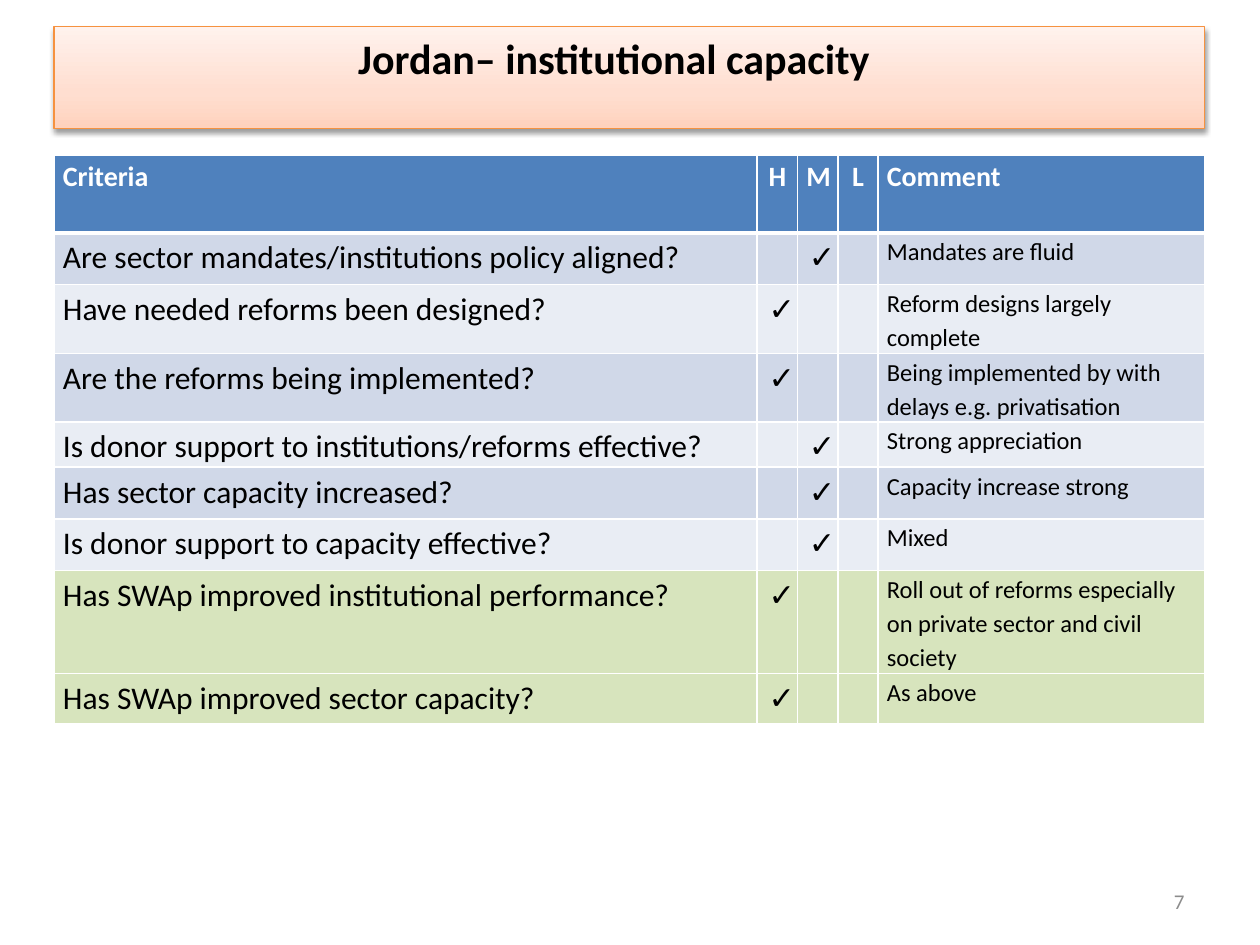
from pptx import Presentation
from pptx.dml.color import RGBColor as RGB
from pptx.enum.shapes import MSO_SHAPE as Shape
from pptx.enum.text import MSO_ANCHOR as Anchor, PP_ALIGN as Align
from pptx.oxml import parse_xml
from pptx.util import Inches, Pt

BLACK = RGB(0x00, 0x00, 0x00)
WHITE = RGB(0xFF, 0xFF, 0xFF)
GREY = RGB(0x8C, 0x8C, 0x8C)
BLUE = RGB(0x4F, 0x81, 0xBD)
DARK = RGB(0xD0, 0xD8, 0xE8)
PALE = RGB(0xE9, 0xED, 0xF4)
GREEN = RGB(0xD7, 0xE4, 0xBD)
EDGE = RGB(0xF6, 0x92, 0x40)
PEACH = [(0, RGB(0xFF, 0xD2, 0xBD)), (35, RGB(0xFF, 0xDE, 0xD0)),
         (100, RGB(0xFF, 0xF2, 0xED))]
NS = 'xmlns:a="http://schemas.openxmlformats.org/drawingml/2006/main"'


def write(frame, text, size=18, color=BLACK, bold=False, align=Align.LEFT,
          space=None, left=0, hang=0):
    frame.word_wrap = True
    para = frame.paragraphs[0]
    para.alignment = align
    para.line_spacing = space
    props = para._p.get_or_add_pPr()
    props.set("marL", str(Inches(left)))
    props.set("indent", str(Inches(hang)))
    run = para.add_run()
    run.text = text
    font = run.font
    font.name, font.size, font.bold = "Calibri", Pt(size), bold
    font.color.rgb = color


def rule(cell, side, width):
    cell._tc.get_or_add_tcPr().append(parse_xml(
        f'<a:ln{side} {NS} w="{Pt(width)}"><a:solidFill>'
        f'<a:srgbClr val="{WHITE}"/></a:solidFill></a:ln{side}>'))


deck = Presentation()
deck.slide_width, deck.slide_height = Inches(10), Inches(7.5)
slide = deck.slides.add_slide(deck.slide_layouts[6])

# Criteria table: text, rating column, comment, height, fill
HEAD = ["Criteria", "H", "M", "L", "Comment"]
ROWS = [
    ("Are sector mandates/institutions policy aligned?", "M",
     "Mandates are fluid", 0.41, DARK),
    ("Have needed reforms been designed?", "H",
     "Reform designs largely complete", 0.54, PALE),
    ("Are the reforms being implemented?", "H",
     "Being implemented by with delays e.g. privatisation", 0.54, DARK),
    ("Is donor support to institutions/reforms effective?", "M",
     "Strong appreciation", 0.36, PALE),
    ("Has sector capacity increased?", "M",
     "Capacity increase strong", 0.41, DARK),
    ("Is donor support to capacity effective?", "M", "Mixed", 0.41, PALE),
    ("Has SWAp improved institutional performance?", "H",
     "Roll out of reforms especially on private sector and civil society",
     0.81, GREEN),
    ("Has SWAp improved sector capacity?", "H", "As above", 0.4, GREEN),
]
WIDTHS = [5.58, 0.32, 0.32, 0.32, 2.59]
TALL = [0.62] + [row[3] for row in ROWS]

table = slide.shapes.add_table(
    len(TALL), len(WIDTHS), Inches(0.43), Inches(1.23),
    Inches(sum(WIDTHS)), Inches(sum(TALL))).table
table.first_row = table.horz_banding = False
for col, width in zip(table.columns, WIDTHS):
    col.width = Inches(width)
for row, height in zip(table.rows, TALL):
    row.height = Inches(height)

LINES = [HEAD]
for ask, mark, note, _, _ in ROWS:
    ticks = ["✓" if name == mark else "" for name in HEAD[1:4]]
    LINES.append([ask, *ticks, note])
FILLS = [BLUE] + [row[4] for row in ROWS]

for r, line in enumerate(LINES):
    for c, text in enumerate(line):
        cell = table.cell(r, c)
        cell.margin_left = cell.margin_right = Inches(0.07)
        cell.margin_top = cell.margin_bottom = 0
        for side in "LRTB":
            thick = (r, side) in [(0, "B"), (1, "T")]
            rule(cell, side, 3 if thick else 1)
        cell.fill.solid()
        cell.fill.fore_color.rgb = FILLS[r]
        if not text:
            continue
        look = {"space": 1.15, "size": 14 if c == 4 else 18}
        if c == 0:
            look.update(left=0.38, hang=-0.38)
        elif c < 4:
            look.update(left=0.02)
        if r == 0:
            look.update(size=16, color=WHITE, bold=True)
            if c in (2, 3):
                look.update(align=Align.CENTER, left=0)
        write(cell.text_frame, text, **look)

# Title banner with gradient and soft shadow
banner = slide.shapes.add_shape(
    Shape.RECTANGLE, Inches(0.43), Inches(0.21), Inches(9.13), Inches(0.81))
banner.shadow.inherit = False
banner.fill.gradient()
banner.fill.gradient_angle = 90
stops = banner._element.spPr.find(".//{*}gsLst")
for old in list(stops):
    stops.remove(old)
for pos, color in PEACH:
    stops.append(parse_xml(f'<a:gs {NS} pos="{pos * 1000}">'
                           f'<a:srgbClr val="{color}"/></a:gs>'))
banner.line.color.rgb = EDGE
banner.line.width = Pt(0.75)
banner._element.spPr.find("{*}effectLst").append(parse_xml(
    f'<a:outerShdw {NS} blurRad="{Pt(3.1)}" dist="{Pt(1.6)}" dir="5400000" '
    'rotWithShape="0"><a:srgbClr val="000000"><a:alpha val="38000"/>'
    '</a:srgbClr></a:outerShdw>'))
frame = banner.text_frame
frame.vertical_anchor = Anchor.TOP
frame.margin_right = Inches(0.34)
write(frame, "Jordan– institutional capacity", size=24, bold=True,
      align=Align.CENTER)

# Slide number
number = slide.shapes.add_textbox(
    Inches(7.17), Inches(6.95), Inches(2.33), Inches(0.4)).text_frame
number.vertical_anchor = Anchor.MIDDLE
write(number, "7", size=12, color=GREY, align=Align.RIGHT)

deck.save("out.pptx")
